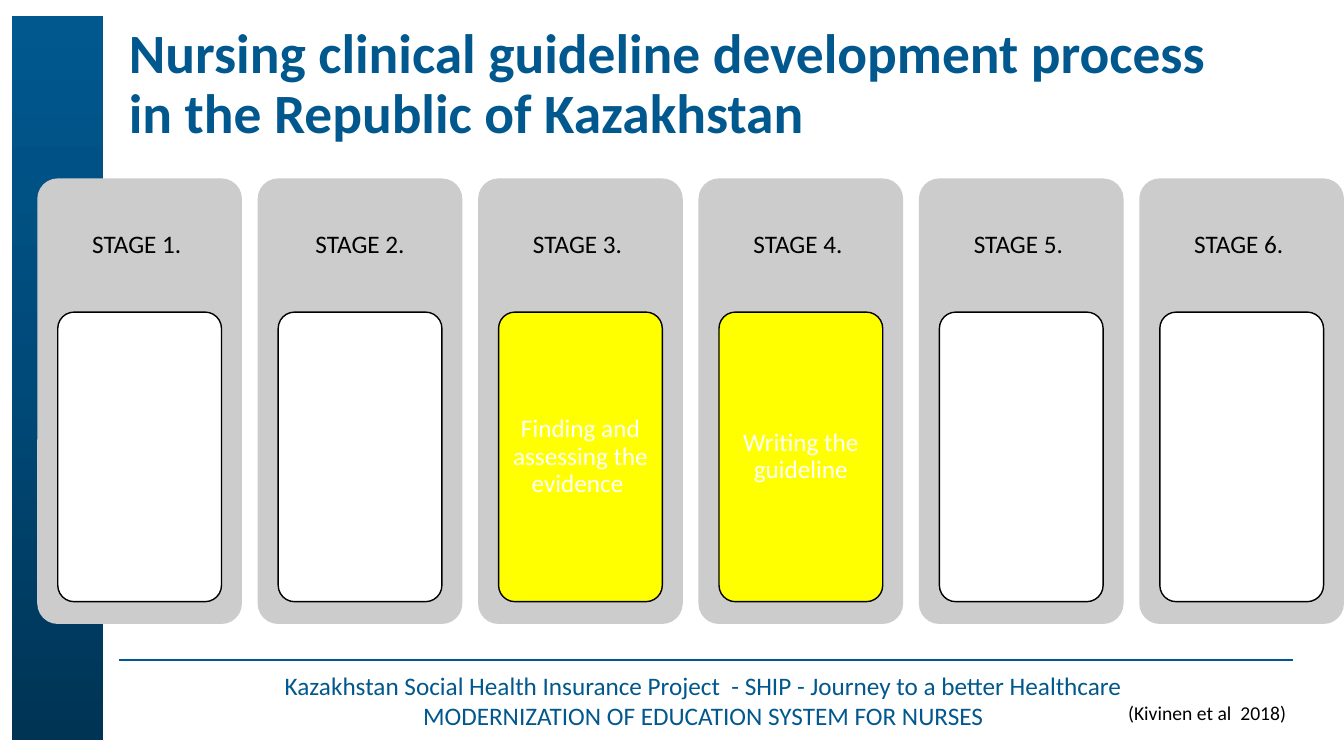
from copy import deepcopy

from pptx import Presentation
from pptx.dml.color import RGBColor
from pptx.enum import shapes, text
from pptx.oxml.ns import qn
from pptx.util import Inches, Pt
from lxml import etree

COLORS = {
    "blue": "01588E",
    "bar_dark": "003455",
    "bar_mid": "004A79",
    "bar_light": "00588F",
    "panel": "CCCCCC",
    "highlight": "FFFF00",
    "white": "FFFFFF",
    "black": "000000",
}
FONT = "Calibri"
STAGES = [
    ("STAGE 1. ", ""),
    ("STAGE 2.", ""),
    ("STAGE 3. ", "Finding and assessing the evidence "),
    ("STAGE 4. ", "Writing the guideline"),
    ("STAGE 5. ", ""),
    ("STAGE 6. ", ""),
]


def rgb(name):
    return RGBColor.from_string(COLORS[name])


def set_text(holder, words, size, color, align="LEFT", spacing=None, bold=False, **frame_format):
    """Write one paragraph; frame_format holds text frame attributes."""
    frame = holder.text_frame
    for key, value in {"word_wrap": True, **frame_format}.items():
        setattr(frame, key, value)
    paragraph = frame.paragraphs[0]
    paragraph.text = words
    paragraph.alignment = text.PP_ALIGN[align]
    if spacing:
        paragraph.line_spacing = spacing
    for run in paragraph.runs:
        run.font.color.rgb = rgb(color)
        for key, value in {"name": FONT, "size": Pt(size), "bold": bold}.items():
            setattr(run.font, key, value)


def margins(side, top):
    return {
        "margin_left": Inches(side), "margin_right": Inches(side),
        "margin_top": Inches(top), "margin_bottom": Inches(top),
        "vertical_anchor": text.MSO_ANCHOR.MIDDLE,
    }


def add_box(slide, box, words, size, color, **options):
    holder = slide.shapes.add_textbox(*map(Inches, box))
    set_text(holder, words, size, color, **options)


def add_panel(slide, box, fill, line=None):
    panel = slide.shapes.add_shape(shapes.MSO_SHAPE.ROUNDED_RECTANGLE, *map(Inches, box))
    panel.shadow.inherit = False
    panel.adjustments[0] = 0.1
    panel.fill.solid()
    panel.fill.fore_color.rgb = rgb(fill)
    if line:
        panel.line.color.rgb = rgb(line)
        panel.line.width = Pt(1)
    else:
        panel.line.fill.background()
    return panel


def add_side_bar(slide, box):
    bar = slide.shapes.add_shape(shapes.MSO_SHAPE.RECTANGLE, *map(Inches, box))
    bar.shadow.inherit = False
    bar.line.color.rgb = rgb("white")
    bar.line.width = Pt(1)
    bar.fill.gradient()
    bar.fill.gradient_angle = 90
    stop_list = next(bar._element.iter(qn("a:gsLst")))
    stop_list.insert(1, deepcopy(stop_list[0]))
    shades = [(0, "bar_dark"), (0.5, "bar_mid"), (1, "bar_light")]
    for stop, (position, color) in zip(bar.fill.gradient_stops, shades):
        stop.position = position
        stop.color.rgb = rgb(color)


def add_footer(slide, box):
    left, top, width, height = box
    rule = slide.shapes.add_connector(
        shapes.MSO_CONNECTOR.STRAIGHT,
        *map(Inches, (left + 0.04, top - 0.05, left + width + 0.01, top - 0.05)))
    rule.line.color.rgb = rgb("blue")
    rule.line.width = Pt(1.5)
    etree.SubElement(rule._element.spPr, qn("a:effectLst"))
    add_box(slide, box,
            "Kazakhstan Social Health Insurance Project  - SHIP - Journey to a better Healthcare\v"
            "MODERNIZATION OF EDUCATION SYSTEM FOR NURSES",
            18, "blue", align="CENTER")
    add_box(slide, (left + 9.95, top + 0.3, 1.79, 0.34), "(Kivinen et al  2018)",
            14, "black", word_wrap=False)


def add_stage(slide, box, label, task):
    left, top, width, height = box
    label_height = 0.3 * height
    inset = 0.1 * width
    add_panel(slide, box, "panel")
    add_box(slide, (left, top, width, label_height), label, 18, "black",
            align="CENTER", spacing=0.9, **margins(0.07, 0.07))
    card_box = (left + inset, top + label_height, width - 2 * inset, 0.65 * height)
    card = add_panel(slide, card_box, "highlight" if task else "white", "black")
    if task:
        set_text(card, task, 18, "white", align="CENTER", spacing=0.9, **margins(0.05, 0.04))


def add_stage_row(slide, box, stage_width=2.03):
    left, top, width, height = box
    pitch = (width - stage_width) / (len(STAGES) - 1)
    for index, (label, task) in enumerate(STAGES):
        add_stage(slide, (left + index * pitch, top, stage_width, height), label, task)


def main():
    deck = Presentation()
    deck.slide_width, deck.slide_height = Inches(13.33), Inches(7.5)
    slide = deck.slides.add_slide(deck.slide_layouts[6])
    add_side_bar(slide, (0.11, 0.15, 0.92, 7.2))
    add_box(slide, (1.18, 0.4, 11.24, 0.9),
            "Nursing clinical guideline development process in the Republic of Kazakhstan",
            39.6, "blue", bold=True, spacing=0.9, vertical_anchor=text.MSO_ANCHOR.MIDDLE)
    add_stage_row(slide, (0.37, 1.77, 12.96, 4.42))
    add_footer(slide, (1.14, 6.6, 11.67, 0.71))
    deck.save("out.pptx")


if __name__ == "__main__":
    main()
